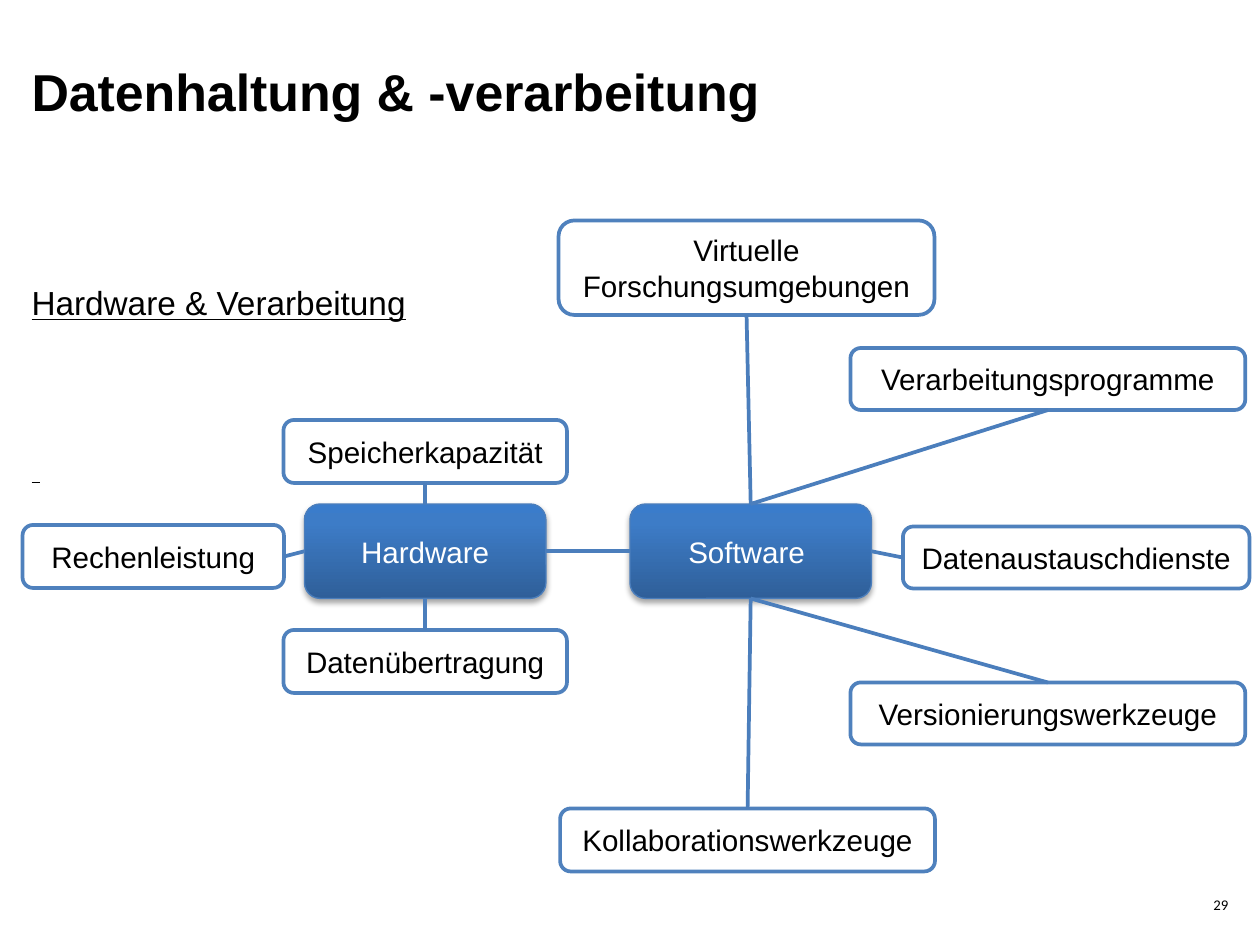
from copy import deepcopy

from pptx import Presentation
from pptx.dml.color import RGBColor
from pptx.enum.shapes import MSO_CONNECTOR as Connector, MSO_SHAPE as Shape
from pptx.enum.text import MSO_ANCHOR as Anchor, MSO_AUTO_SIZE as AutoSize, PP_ALIGN as Align
from pptx.oxml import parse_xml
from pptx.oxml.ns import nsdecls, qn
from pptx.util import Cm, Pt

BLACK = RGBColor(0x00, 0x00, 0x00)
WHITE = RGBColor(0xFF, 0xFF, 0xFF)
BORDER = RGBColor(0x4F, 0x81, 0xBD)
LINK = RGBColor(0x4B, 0x7E, 0xBC)
HUB_STOPS = [
    (0, RGBColor(0x2F, 0x5F, 0x99)),
    (0.8, RGBColor(0x3D, 0x7C, 0xC7)),
    (1, RGBColor(0x3A, 0x7C, 0xCB)),
]
TOP, LEFT, BOTTOM, RIGHT = range(4)

HUBS = {
    "Hardware": (5.37, 5.4, 4.6, 1.8),
    "Software ": (11.57, 5.4, 4.6, 1.8),
}
TOPICS = {
    "Speicherkapazität": (4.97, 3.8, 5.4, 1.2),
    "Rechenleistung": (0, 5.8, 4.98, 1.2),
    "Datenübertragung": (4.97, 7.8, 5.4, 1.2),
    "Kollaborationswerkzeuge": (10.24, 11.2, 7.14, 1.2),
    "Virtuelle Forschungsumgebungen": (10.21, 0, 7.16, 1.8),
    "Datenaustauschdienste": (16.77, 5.83, 6.6, 1.18),
    "Versionierungswerkzeuge": (15.77, 8.8, 7.52, 1.18),
    "Verarbeitungsprogramme": (15.77, 2.43, 7.52, 1.18),
}
LINKS = [
    ("Hardware", RIGHT, "Software ", LEFT),
    ("Hardware", TOP, "Speicherkapazität", BOTTOM),
    ("Hardware", LEFT, "Rechenleistung", RIGHT),
    ("Hardware", BOTTOM, "Datenübertragung", TOP),
    ("Software ", TOP, "Virtuelle Forschungsumgebungen", BOTTOM),
    ("Software ", TOP, "Verarbeitungsprogramme", BOTTOM),
    ("Software ", RIGHT, "Datenaustauschdienste", LEFT),
    ("Software ", BOTTOM, "Versionierungswerkzeuge", TOP),
    ("Software ", BOTTOM, "Kollaborationswerkzeuge", TOP),
]


def write(para, text, size=16, font="Arial", color=BLACK, bold=False,
          underline=False, align=Align.LEFT, spacing=None, before=0):
    para.alignment = align
    para.line_spacing = spacing
    para.space_before = Pt(before)
    span = para.add_run()
    span.text = text
    span.font.size = Pt(size)
    span.font.name = font
    span.font.color.rgb = color
    span.font.bold = bold
    span.font.underline = underline


def place(shape, box):
    shape.left, shape.top, shape.width, shape.height = map(Cm, box)


def prepare_frame(shape, anchor):
    frame = shape.text_frame
    frame.word_wrap = True
    frame.auto_size = AutoSize.NONE
    frame.vertical_anchor = anchor
    frame.margin_left = frame.margin_right = frame.margin_top = frame.margin_bottom = 0
    return frame


def add_title(page, box):
    title = page.shapes.title
    place(title, box)
    frame = prepare_frame(title, Anchor.TOP)
    write(frame.paragraphs[0], "Datenhaltung & -verarbeitung", size=28, bold=True, spacing=Pt(29))


def add_body(page, box):
    body = page.placeholders[1]
    place(body, box)
    frame = prepare_frame(body, Anchor.TOP)
    lines = [("Hardware & Verarbeitung", 18, 0), (" ", 16, 59)]
    for index, (text, size, before) in enumerate(lines):
        para = frame.add_paragraph() if index else frame.paragraphs[0]
        properties = para._p.get_or_add_pPr()
        properties.set("marL", str(Cm(0.95)))
        properties.set("indent", str(-Cm(0.95)))
        properties.append(parse_xml(f"<a:buNone {nsdecls('a')}/>"))
        write(para, text, size=size, underline=True, spacing=1.5, before=before)


def add_page_number(page, box):
    number = page.shapes.add_textbox(*map(Cm, box))
    frame = prepare_frame(number, Anchor.BOTTOM)
    write(frame.paragraphs[0], "29", size=8, font="Calibri", align=Align.RIGHT)


def add_node(page, box, text, color):
    node = page.shapes.add_shape(Shape.ROUNDED_RECTANGLE, *map(Cm, box))
    node.shadow.inherit = False
    frame = node.text_frame
    frame.word_wrap = True
    frame.vertical_anchor = Anchor.MIDDLE
    write(frame.paragraphs[0], text, color=color, align=Align.CENTER)
    return node


def style_topic(node):
    node.fill.solid()
    node.fill.fore_color.rgb = WHITE
    node.line.color.rgb = BORDER
    node.line.width = Pt(2)


def style_hub(node):
    node.fill.gradient()
    node.fill.gradient_angle = 90
    properties = node._element.spPr
    stop_list = properties.find(qn("a:gradFill")).find(qn("a:gsLst"))
    stop_list.append(deepcopy(stop_list[-1]))
    for stop, (position, color) in zip(node.fill.gradient_stops, HUB_STOPS):
        stop.position = position
        stop.color.rgb = color
    node.line.color.rgb = LINK
    node.line.width = Pt(0.75)
    properties.find(qn("a:effectLst")).append(parse_xml(
        f'<a:outerShdw {nsdecls("a")} blurRad="{Pt(3.1)}" dist="{Pt(1.8)}" dir="5400000" '
        f'rotWithShape="0"><a:srgbClr val="{BLACK}"><a:alpha val="35000"/></a:srgbClr></a:outerShdw>'))


def add_link(page, start, start_side, end, end_side):
    link = page.shapes.add_connector(Connector.STRAIGHT, 0, 0, 0, 0)
    link.begin_connect(start, start_side)
    link.end_connect(end, end_side)
    link.line.color.rgb = LINK
    link.line.width = Pt(2)
    link._element.spPr.append(parse_xml(f"<a:effectLst {nsdecls('a')}/>"))


def add_network(page, left, top):
    nodes = {}
    for group, color, style in ((HUBS, WHITE, style_hub), (TOPICS, BLACK, style_topic)):
        for text, (x, y, width, height) in group.items():
            nodes[text] = add_node(page, (left + x, top + y, width, height), text, color)
            style(nodes[text])
    for start, start_side, end, end_side in LINKS:
        add_link(page, nodes[start], start_side, nodes[end], end_side)


def main():
    deck = Presentation()
    deck.slide_width, deck.slide_height = Cm(24), Cm(18)
    page = deck.slides.add_slide(deck.slide_layouts[1])
    add_title(page, (0.6, 1.3, 16.7, 3))
    add_body(page, (0.6, 5, 23.4, 10.9))
    add_page_number(page, (17.2, 17, 6.2, 0.4))
    add_network(page, 0.43, 4.2)
    deck.save("out.pptx")


if __name__ == "__main__":
    main()
